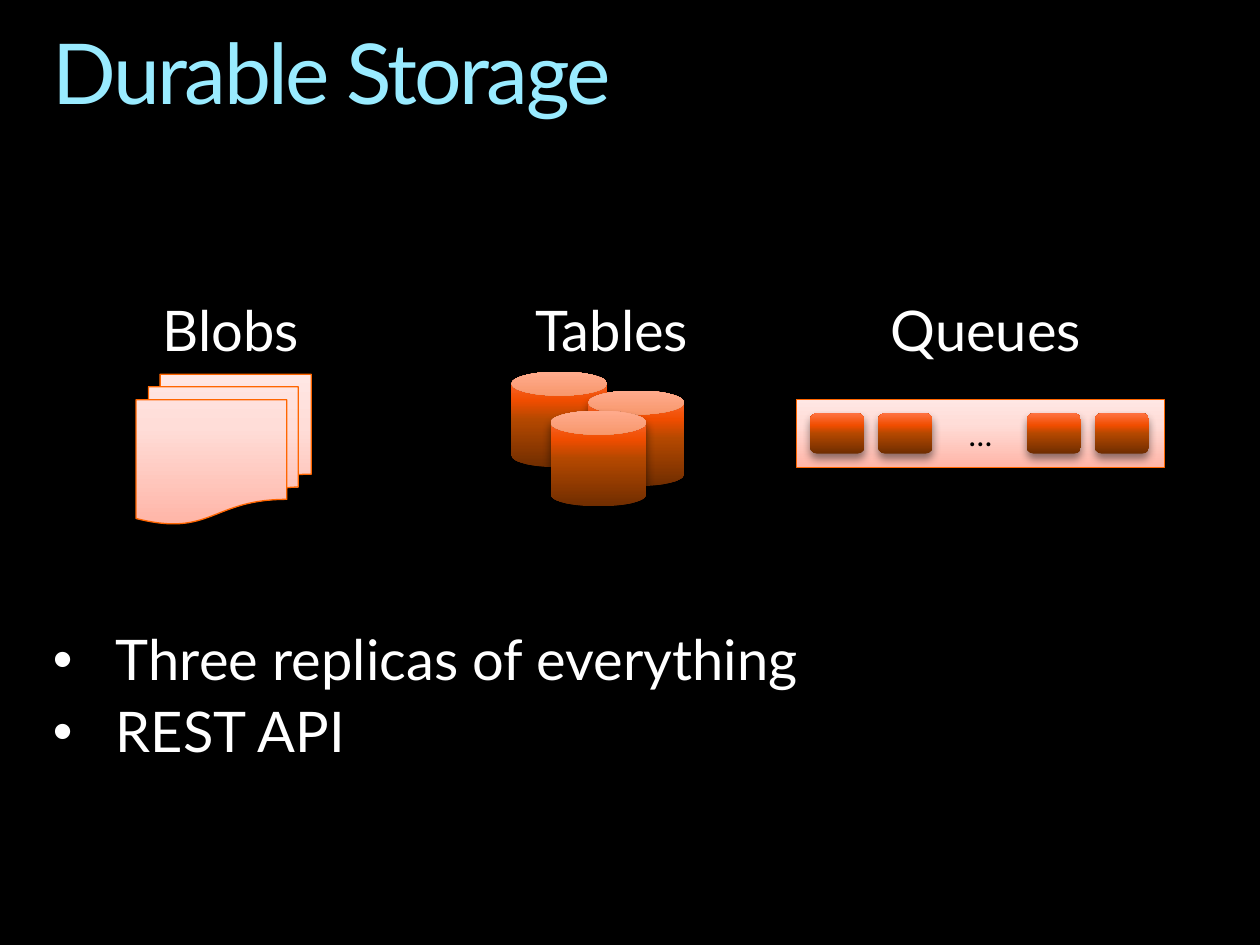
"""Build the Durable Storage slide with three illustrated storage types."""
import dataclasses

import lxml.etree
import pptx
import pptx.dml.color
import pptx.enum.shapes
import pptx.enum.text
import pptx.oxml
import pptx.oxml.ns
import pptx.shapes.autoshape
import pptx.text.text
import pptx.util

Inches = pptx.util.Inches
Pt = pptx.util.Pt
Shape = pptx.enum.shapes.MSO_SHAPE
Anchor = pptx.enum.text.MSO_ANCHOR
Align = pptx.enum.text.PP_ALIGN
qn = pptx.oxml.ns.qn

FONT = "Lato"
COLORS = {"black": "000000", "white": "FFFFFF", "outline": "FF6600"}
GRADIENTS = {
    "title": ((0, "66E0FF"), (36, "99EBFF"), (86, "66E0FF")),
    "pale": ((0, "FFB5A7"), (65, "FFDDD8"), (100, "FFE7E4")),
    "deep": ((0, "702D00"), (50, "B44800"), (70, "F04D00"), (100, "FF7342")),
}


@dataclasses.dataclass(frozen=True)
class Look:
    """Surface style shared by several drawn pieces."""

    gradient: str
    outlined: bool
    opacity: int
    blur: int


@dataclasses.dataclass(frozen=True)
class Piece:
    """One preset shape, measured in inches."""

    preset: Shape
    left: float
    top: float
    width: float
    height: float
    look: Look


@dataclasses.dataclass(frozen=True)
class Storage:
    """A storage type with its label position and its pieces."""

    name: str
    left: float
    width: float
    pieces: tuple[Piece, ...]


PALE = Look("pale", True, 35, 4)
DEEP = Look("deep", False, 45, 5)
STORAGES = (
    Storage("Blobs", 1.19, 1.32, (
        Piece(Shape.FLOWCHART_MULTIDOCUMENT, 1.08, 2.97, 1.39, 1.19, PALE),)),
    Storage("Tables", 4.15, 1.5, tuple(
        Piece(Shape.CAN, left, top, 0.76, 0.76, DEEP)
        for left, top in ((4.06, 2.95), (4.67, 3.1), (4.37, 3.26)))),
    Storage("Queues", 6.97, 1.77, (
        Piece(Shape.RECTANGLE, 6.32, 3.17, 2.92, 0.54, PALE),
        *(Piece(Shape.ROUNDED_RECTANGLE, left, 3.28, 0.43, 0.32, DEEP)
          for left in (6.43, 6.97, 8.15, 8.69)))),
)


def rgb(name: str) -> pptx.dml.color.RGBColor:
    """Return a named colour."""
    return pptx.dml.color.RGBColor.from_string(COLORS[name])


def set_gradient(fill, element, name: str, angle: int) -> None:
    """Give a fill the stops of a named gradient."""
    fill.gradient()
    fill.gradient_angle = angle
    stops = element.find(".//" + qn("a:gsLst"))
    for stop in list(stops):
        stops.remove(stop)
    for position, color in GRADIENTS[name]:
        stop = lxml.etree.SubElement(stops, qn("a:gs"), pos=str(position * 1000))
        lxml.etree.SubElement(stop, qn("a:srgbClr"), val=color)


def set_font(font: pptx.text.text.Font, size: int, color: str) -> None:
    """Set typeface, size and colour."""
    font.name = FONT
    font.size = Pt(size)
    font.color.rgb = rgb(color)


def add_shadow(shape: pptx.shapes.autoshape.Shape, look: Look) -> None:
    """Add a soft black shadow below a shape."""
    shape.shadow.inherit = False
    effects = shape.element.spPr.find(qn("a:effectLst"))
    shadow = lxml.etree.SubElement(
        effects, qn("a:outerShdw"), blurRad=str(Pt(look.blur)),
        dist=str(Pt(3)), dir="5400000", rotWithShape="0")
    color = lxml.etree.SubElement(shadow, qn("a:srgbClr"), val=COLORS["black"])
    lxml.etree.SubElement(color, qn("a:alpha"), val=str(look.opacity * 1000))


def add_piece(shapes, piece: Piece) -> pptx.shapes.autoshape.Shape:
    """Draw one piece with its gradient, outline and shadow."""
    shape = shapes.add_shape(
        piece.preset, Inches(piece.left), Inches(piece.top),
        Inches(piece.width), Inches(piece.height))
    set_gradient(shape.fill, shape.element.spPr, piece.look.gradient, 90)
    if piece.look.outlined:
        shape.line.color.rgb = rgb("outline")
        shape.line.width = Pt(0.75)
    else:
        shape.line.fill.background()
    add_shadow(shape, piece.look)
    return shape


def add_storage(slide, storage: Storage) -> None:
    """Draw a storage type as a group of pieces and a label."""
    shapes = slide.shapes.add_group_shape().shapes
    for piece in storage.pieces:
        shape = add_piece(shapes, piece)
        if piece.preset == Shape.RECTANGLE:
            shape.text_frame.text = "…"
            shape.text_frame.vertical_anchor = Anchor.MIDDLE
            para = shape.text_frame.paragraphs[0]
            para.alignment = Align.CENTER
            set_font(para.runs[0].font, 18, "black")
    label = shapes.add_textbox(
        Inches(storage.left), Inches(2.3), Inches(storage.width), Inches(0.64))
    label.text_frame.text = storage.name
    label.text_frame.word_wrap = False
    set_font(label.text_frame.paragraphs[0].runs[0].font, 32, "white")


def place(box, top: float, height: float, anchor: Anchor):
    """Move a placeholder, clear its insets and return its text frame."""
    box.left, box.top = Inches(0.42), Inches(top)
    box.width, box.height = Inches(9.17), Inches(height)
    frame = box.text_frame
    frame.margin_left = frame.margin_right = 0
    frame.margin_top = frame.margin_bottom = 0
    frame.word_wrap = True
    frame.auto_size = pptx.enum.text.MSO_AUTO_SIZE.NONE
    frame.vertical_anchor = anchor
    return frame


def write_title(slide) -> None:
    """Fill the title placeholder."""
    frame = place(slide.shapes.title, 0.25, 0.73, Anchor.TOP)
    frame.text = "Durable Storage"
    para = frame.paragraphs[0]
    para.alignment = Align.LEFT
    para.line_spacing = 0.9
    span = para.runs[0]
    span.font.name = FONT
    span.font.size = Pt(48)
    properties = span._r.get_or_add_rPr()
    properties.set("spc", "-150")
    set_gradient(span.font.fill, properties, "title", 270)


def write_body(slide) -> None:
    """Fill the body placeholder with its bullets."""
    frame = place(slide.placeholders[1], 1.55, 4.63, Anchor.BOTTOM)
    frame.margin_bottom = Inches(0.11)
    frame.text = "Three replicas of everything\nREST API"
    for index, para in enumerate(frame.paragraphs):
        properties = para._p.get_or_add_pPr()
        properties.set("marL", str(Inches(0.5)))
        properties.set("indent", str(Inches(-0.5)))
        lxml.etree.SubElement(properties, qn("a:buChar"), char="•")
        para.line_spacing = 0.9
        para.space_before = Pt(6.4 if index else 0)
        set_font(para.runs[0].font, 32, "white")


def main() -> None:
    """Build and save the deck."""
    deck = pptx.Presentation()
    deck.slide_width, deck.slide_height = Inches(10), Inches(7.5)
    slide = deck.slides.add_slide(deck.slide_layouts[1])
    slide.background.fill.solid()
    slide.background.fill.fore_color.rgb = rgb("black")
    write_title(slide)
    write_body(slide)
    for storage in STORAGES:
        add_storage(slide, storage)
    deck.save("out.pptx")


if __name__ == "__main__":
    main()
